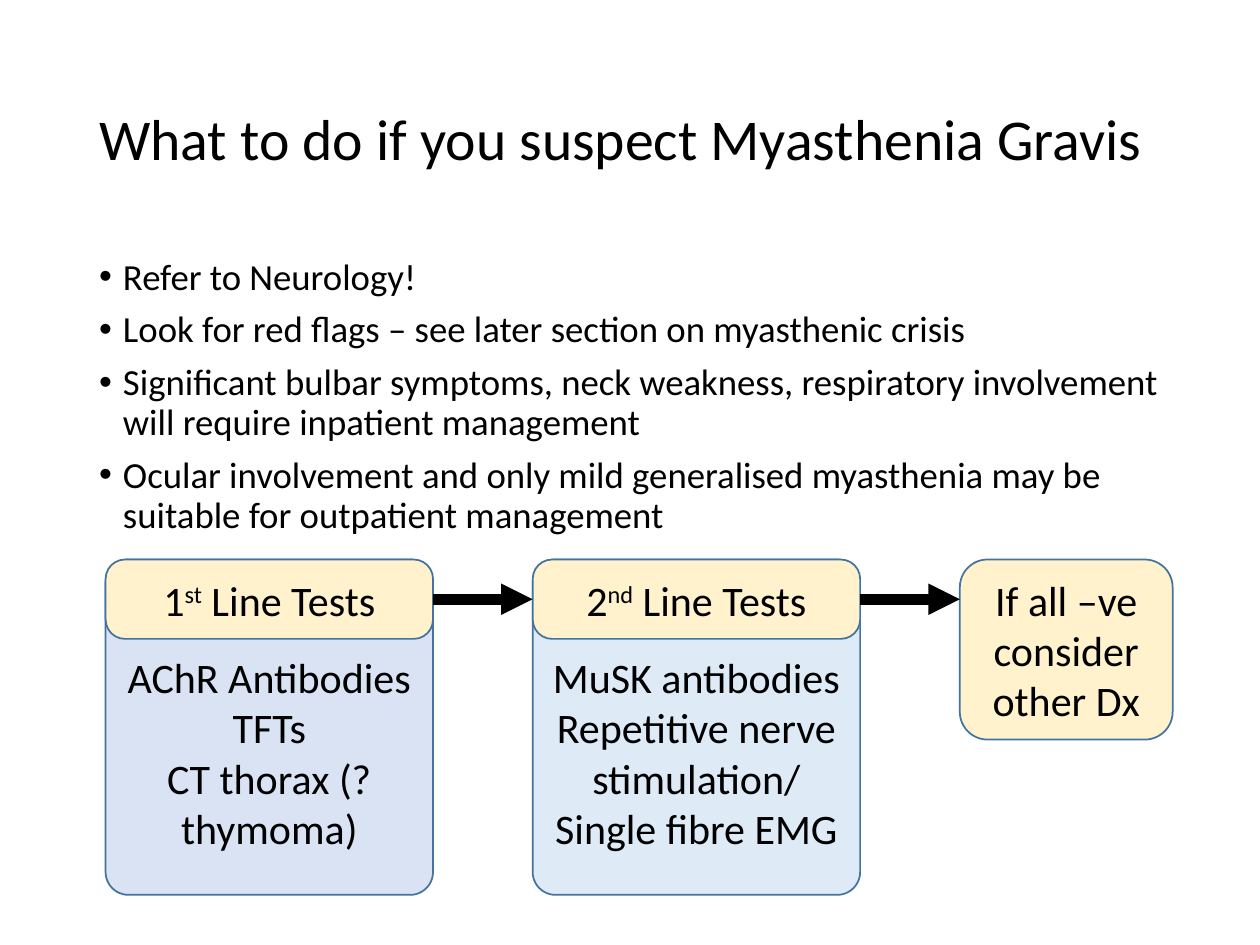
from dataclasses import dataclass

from lxml.etree import SubElement
from pptx import Presentation
from pptx.dml.color import RGBColor
from pptx.enum.shapes import MSO_CONNECTOR, MSO_SHAPE
from pptx.enum.text import MSO_ANCHOR, PP_ALIGN
from pptx.oxml.ns import qn
from pptx.util import Cm, Pt


@dataclass(frozen=True)
class Theme:
    font: str = "Calibri"
    title_size: float = 33
    body_size: float = 21
    box_size: float = 24
    text: str = "000000"
    outline: str = "43739E"
    header: str = "FFF2CC"
    first_panel: str = "DAE3F3"
    second_panel: str = "DEEBF7"


THEME = Theme()
RIGHT, LEFT = 3, 1


def color(value):
    return RGBColor.from_string(value)


def add_bullet(paragraph):
    properties = paragraph._p.get_or_add_pPr()
    properties.set("marL", str(Cm(0.48)))
    properties.set("indent", str(-Cm(0.48)))
    SubElement(properties, qn("a:buFont")).set("typeface", "Arial")
    SubElement(properties, qn("a:buChar")).set("char", "•")


def write(frame, paragraphs, size, align=PP_ALIGN.LEFT, anchor=MSO_ANCHOR.TOP,
          line_spacing=None, space_before=0, bullet=False, top=0.13):
    frame.word_wrap = True
    frame.vertical_anchor = anchor
    frame.margin_top = Cm(top)
    for index, parts in enumerate(paragraphs):
        paragraph = frame.add_paragraph() if index else frame.paragraphs[0]
        paragraph.alignment = align
        if line_spacing:
            paragraph.line_spacing = line_spacing
        if index and space_before:
            paragraph.space_before = Pt(space_before)
        if bullet:
            add_bullet(paragraph)
        parts = [parts] if isinstance(parts, str) else parts
        for position, part in enumerate(parts):
            run = paragraph.add_run()
            run.text = part
            run.font.name = THEME.font
            run.font.size = Pt(size)
            run.font.color.rgb = color(THEME.text)
            if position % 2:
                run._r.get_or_add_rPr().set("baseline", "30000")


class SlideBuilder:
    def __init__(self, slide, theme):
        self.slide = slide
        self.theme = theme

    def text(self, left, top, width, height, paragraphs, **text_format):
        shape = self.slide.shapes.add_textbox(Cm(left), Cm(top), Cm(width), Cm(height))
        write(shape.text_frame, paragraphs, line_spacing=0.9, **text_format)

    def box(self, left, top, width, height, paragraphs, fill, radius, text_top=0.13):
        shape = self.slide.shapes.add_shape(
            MSO_SHAPE.ROUNDED_RECTANGLE, Cm(left), Cm(top), Cm(width), Cm(height))
        shape.adjustments[0] = radius / min(width, height)
        shape.shadow.inherit = False
        shape.fill.solid()
        shape.fill.fore_color.rgb = color(fill)
        shape.line.color.rgb = color(self.theme.outline)
        shape.line.width = Pt(1)
        write(shape.text_frame, paragraphs, self.theme.box_size, align=PP_ALIGN.CENTER,
              anchor=MSO_ANCHOR.MIDDLE, top=text_top)
        return shape

    def arrow(self, left, right, y, start, end=None):
        connector = self.slide.shapes.add_connector(
            MSO_CONNECTOR.STRAIGHT, Cm(left), Cm(y), Cm(right), Cm(y))
        connector.begin_connect(start, RIGHT)
        if end is not None:
            connector.end_connect(end, LEFT)
        connector.line.color.rgb = color(self.theme.text)
        connector.line.width = Pt(6)
        SubElement(connector.line._get_or_add_ln(), qn("a:tailEnd")).set("type", "triangle")
        SubElement(connector._element.spPr, qn("a:effectLst"))


def main():
    presentation = Presentation()
    presentation.slide_width, presentation.slide_height = Cm(25.4), Cm(19.05)
    slide = presentation.slides.add_slide(presentation.slide_layouts[6])
    builder = SlideBuilder(slide, THEME)

    builder.text(1.75, 1.02, 21.9, 3.68, ["What to do if you suspect Myasthenia Gravis"],
                 size=THEME.title_size, anchor=MSO_ANCHOR.MIDDLE)
    builder.text(1.75, 5.08, 21.9, 12.09, [
        "Refer to Neurology!",
        "Look for red flags – see later section on myasthenic crisis",
        "Significant bulbar symptoms, neck weakness, respiratory involvement "
        "will require inpatient management",
        "Ocular involvement and only mild generalised myasthenia may be "
        "suitable for outpatient management",
    ], size=THEME.body_size, space_before=7.5, bullet=True)

    top, width, gap, header_height = 11.28, 6.6, 2.01, 1.6
    lefts = [2.13 + column * (width + gap) for column in range(3)]
    stages = [
        (("1", "st", " Line Tests"), THEME.first_panel,
         ["AChR Antibodies", "TFTs", "CT thorax (?thymoma)"]),
        (("2", "nd", " Line Tests"), THEME.second_panel,
         ["MuSK antibodies", "Repetitive nerve stimulation/", "Single fibre EMG"]),
    ]
    headers = []
    for left, (heading, fill, tests) in zip(lefts, stages):
        builder.box(left, top, width, 6.76, tests, fill, radius=0.46, text_top=1.14)
        headers.append(builder.box(left, top, width, header_height, [heading],
                                   THEME.header, radius=0.39))
    builder.box(lefts[2], top, 4.29, 3.63, ["If all –ve consider other Dx"],
                THEME.header, radius=0.56)

    arrow_y = top + header_height / 2
    for index, header in enumerate(headers):
        target = headers[index + 1] if index + 1 < len(headers) else None
        builder.arrow(lefts[index] + width, lefts[index + 1], arrow_y, header, target)

    presentation.save("out.pptx")


if __name__ == "__main__":
    main()
